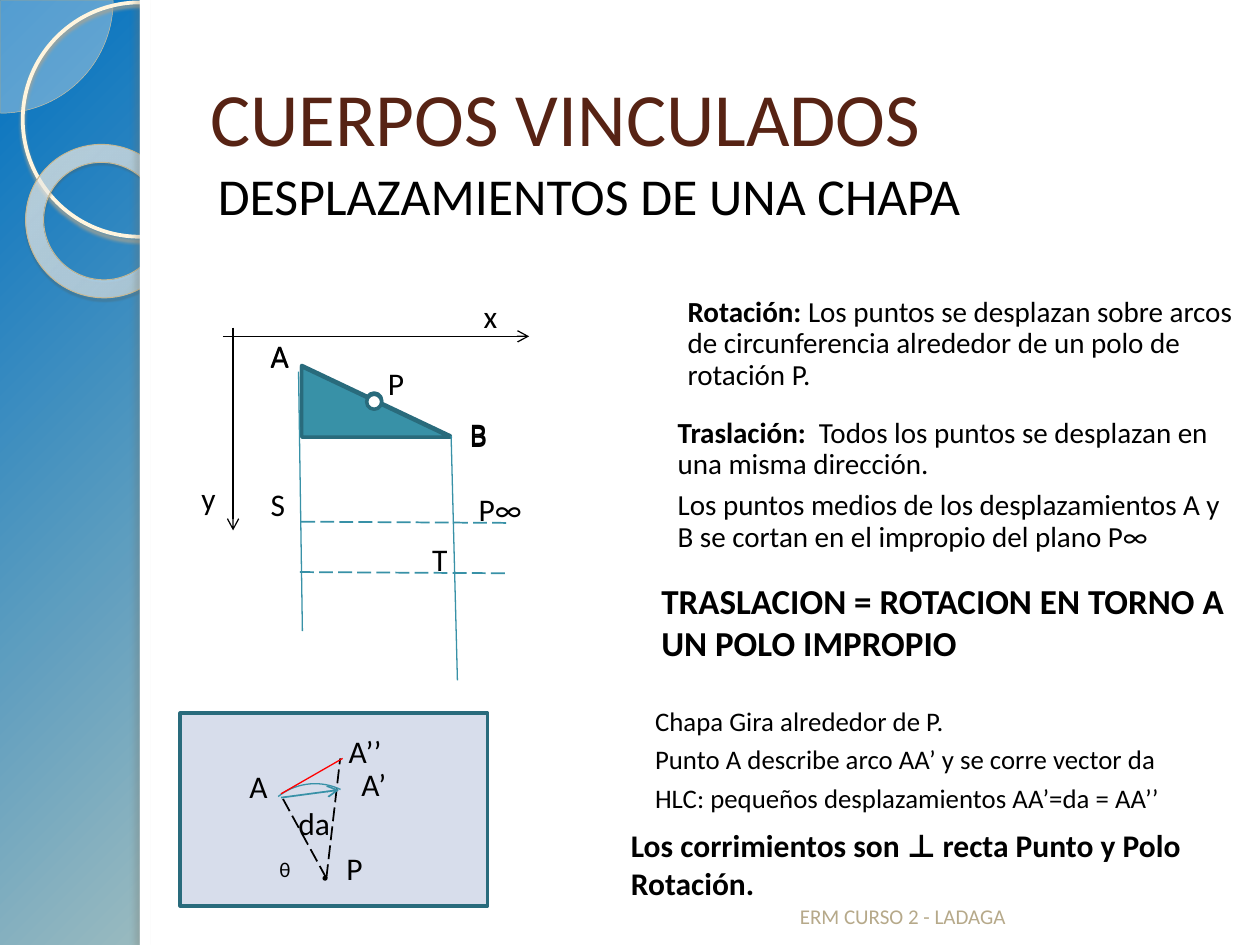
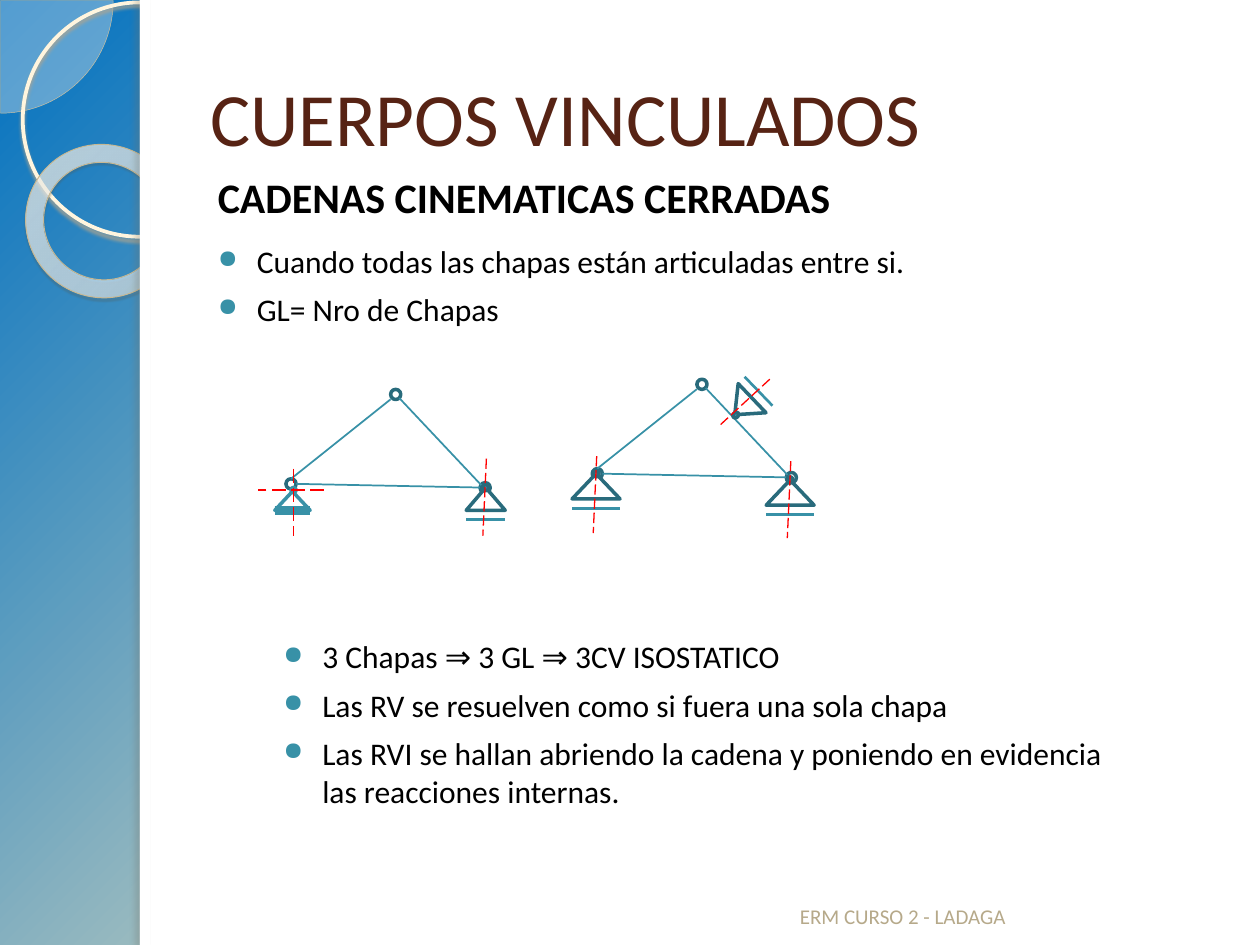
from dataclasses import dataclass

from lxml import etree
from pptx import Presentation
from pptx.dml.color import RGBColor
from pptx.enum.dml import MSO_LINE
from pptx.enum.shapes import MSO_CONNECTOR, MSO_SHAPE
from pptx.enum.text import MSO_ANCHOR
from pptx.oxml.ns import qn
from pptx.util import Pt

STRAIGHT = MSO_CONNECTOR.STRAIGHT
RECT, OVAL, PIE, DONUT, ARC = (MSO_SHAPE.RECTANGLE, MSO_SHAPE.OVAL, MSO_SHAPE.PIE,
                               MSO_SHAPE.DONUT, MSO_SHAPE.ARC)
TRIANGLE, RIGHT_TRIANGLE = MSO_SHAPE.ISOSCELES_TRIANGLE, MSO_SHAPE.RIGHT_TRIANGLE
LONG_DASH = MSO_LINE.LONG_DASH
TOP, MIDDLE, BOTTOM = MSO_ANCHOR.TOP, MSO_ANCHOR.MIDDLE, MSO_ANCHOR.BOTTOM


@dataclass(frozen=True)
class Theme:
    font: str = "Calibri"
    white: str = "FFFFFF"
    ink: str = "000000"
    title: str = "572314"
    footer: str = "B6A98A"
    teal: str = "3891A7"
    dark_teal: str = "296B7C"
    panel: str = "D7DDEB"
    red: str = "FF0000"
    veil: str = "FEFAF4"
    veil_edge: str = "D3C39F"
    ring: str = "FFF5DE"
    ring_shadow: str = "B0A68F"
    donut_edge: str = "C7B893"
    donut_shadow: str = "5A5444"
    strip_shadow: str = "736F63"
    title_size: float = 43
    subtitle_size: float = 29.6
    heading_size: float = 24
    strong_size: float = 20
    text_size: float = 18
    body_size: float = 16.6
    note_size: float = 15.3
    small_size: float = 12
    # Stops are (position %, colour, opacity %)
    sky: tuple = ((0, "0070C0", 100), (82, "FFEBBE", 100), (100, "C9B484", 100))
    sky_focus: tuple = (-24, -20, 124, 120)
    glass: tuple = ((0, "FFFCF6", 70), (70, "FFFEFB", 55), (100, "F0D28E", 60))
    glass_focus: tuple = (-408, -50, 508, 150)


def add_xml(parent, tag, **attrs):
    return etree.SubElement(parent, qn(tag), {k: str(v) for k, v in attrs.items()})


def add_color(parent, color, opacity):
    add_xml(add_xml(parent, "a:srgbClr", val=color), "a:alpha", val=opacity * 1000)


def radial_gradient(element, stops, focus):
    """Turn the first gradient inside element into a circular one."""
    grad = element.find(".//" + qn("a:gradFill"))
    for child in list(grad):
        grad.remove(child)
    stop_list = add_xml(grad, "a:gsLst")
    for position, color, opacity in stops:
        add_color(add_xml(stop_list, "a:gs", pos=position * 1000), color, opacity)
    circle = add_xml(grad, "a:path", path="circle")
    add_xml(circle, "a:fillToRect", **{k: v * 1000 for k, v in zip("ltrb", focus)})


def add_shadow(sp, color, opacity, blur, distance, angle):
    effects = sp.element.spPr.find(qn("a:effectLst"))
    shadow = add_xml(effects, "a:outerShdw", blurRad=Pt(blur), dist=Pt(distance),
                     dir=angle * 60000, algn="tl", rotWithShape=0)
    add_color(shadow, color, opacity)


class Deck:
    def __init__(self, theme):
        self.theme = theme
        self.prs = Presentation()
        self.prs.slide_width, self.prs.slide_height = Pt(720), Pt(540)
        self.slide = None

    def new_slide(self, title):
        t = self.theme
        self.slide = self.prs.slides.add_slide(self.prs.slide_layouts[6])
        self.slide.background.fill.gradient()
        radial_gradient(self.slide.element, t.sky, t.sky_focus)
        self.side_band()
        self.text(113, 21.6, 590.4, 90, [title], t.title_size, color=t.title, anchor=MIDDLE)
        self.text(450, 496.8, 228.2, 37.4, ["ERM CURSO 2 - LADAGA"], t.small_size,
                  color=t.footer, anchor=BOTTOM)

    def side_band(self):
        t = self.theme
        pie = self.shape(PIE, -64.1, -64.1, 128.8, 128.8, t.veil, t.veil_edge, 0.25)
        pie.adjustments[0], pie.adjustments[1] = 0, 54
        add_xml(pie.element.spPr.find(".//" + qn("a:srgbClr")), "a:alpha", val=33000)
        ring = self.shape(OVAL, 13, 1.4, 133.9, 133.9, None, t.ring, 2.15)
        add_shadow(ring, t.ring_shadow, 85, 2, 2, 90)
        donut = self.shape(DONUT, 14.4, 82.8, 88.6, 87.1, None, t.donut_edge, 0.58, 38.6)
        donut.adjustments[0] = 0.118
        donut.fill.gradient()
        radial_gradient(donut.element, t.glass, t.glass_focus)
        add_shadow(donut, t.donut_shadow, 35, 1, 1.2, 75)
        self.shape(RECT, 80, 0, 640, 540, t.white)
        strip = self.shape(RECT, 80, 0, 5.8, 540, t.white)
        add_shadow(strip, t.strip_shadow, 25, 3, 3, 180)

    def shape(self, kind, x, y, w, h, fill=None, line=None, weight=2, rotation=0):
        sp = self.slide.shapes.add_shape(kind, Pt(x), Pt(y), Pt(w), Pt(h))
        sp.shadow.inherit = False
        sp.rotation = rotation
        if fill:
            sp.fill.solid()
            sp.fill.fore_color.rgb = RGBColor.from_string(fill)
        else:
            sp.fill.background()
        if line:
            sp.line.color.rgb = RGBColor.from_string(line)
            sp.line.width = Pt(weight)
        else:
            sp.line.fill.background()
        return sp

    def line(self, x1, y1, x2, y2, color, weight=1, dashed=False, arrow=False):
        ln = self.slide.shapes.add_connector(STRAIGHT, Pt(x1), Pt(y1), Pt(x2), Pt(y2))
        ln.line.color.rgb = RGBColor.from_string(color)
        ln.line.width = Pt(weight)
        if dashed:
            ln.line.dash_style = LONG_DASH
        if arrow:
            add_xml(ln.element.spPr.find(qn("a:ln")), "a:tailEnd", type="arrow")
        add_xml(ln.element.spPr, "a:effectLst")

    def text(self, x, y, w, h, paragraphs, size, color=None, bold=False, anchor=TOP,
             indent=0, before=0, spacing=None, bullets=False):
        """A paragraph is a string, or a pair of a bold lead and the rest."""
        tf = self.slide.shapes.add_textbox(Pt(x), Pt(y), Pt(w), Pt(h)).text_frame
        tf.word_wrap = True
        tf.vertical_anchor = anchor
        for i, content in enumerate(paragraphs):
            p = tf.paragraphs[0] if i == 0 else tf.add_paragraph()
            has_lead = isinstance(content, tuple)
            for part in content if has_lead else (content,):
                p.add_run().text = part
            for j, r in enumerate(p.runs):
                r.font.name, r.font.size = self.theme.font, Pt(size)
                r.font.bold = bold or (has_lead and j == 0)
                r.font.color.rgb = RGBColor.from_string(color or self.theme.ink)
            p.space_before = Pt(before)
            if spacing:
                p.line_spacing = spacing
            pPr = p._p.get_or_add_pPr()
            pPr.set("marL", str(Pt(indent)))
            if bullets:
                pPr.set("indent", str(Pt(-22.3)))
                add_xml(add_xml(pPr, "a:buClr"), "a:srgbClr", val=self.theme.teal)
                add_xml(pPr, "a:buSzPct", val=80000)
                add_xml(pPr, "a:buChar", char="●")

    def label(self, text, x, y, w=38, size=None):
        self.text(x, y, w, 29, [text], size or self.theme.text_size)

    def note(self, x, y, w, h, paragraphs, size, **style):
        self.text(x, y, w, h, paragraphs, size, indent=31.7, before=5.5, **style)

    def bullet_list(self, x, y, w, h, items):
        self.text(x, y, w, h, items, self.theme.text_size, indent=28.8, before=6, bullets=True)

    def subtitle(self, text, size, **style):
        self.text(110.9, 94.3, 590.4, 39.6, [text], size, indent=6.5, before=6, **style)

    def hinged_plate(self, y):
        t = self.theme
        self.shape(RIGHT_TRIANGLE, 172.4, y, 85, 40.3, t.teal, t.dark_teal)
        self.shape(OVAL, 209.5, y + 15.8, 8.6, 8.6, t.white, t.dark_teal)
        self.label("A", 147.6, y - 20.2)
        self.label("B", 261.4, y + 24.5)

    def three_bar_chain(self, dx=0, dy=0):
        t = self.theme
        for x, y in ((163.4, 273.6), (223.2, 222.5), (274.3, 275.8)):
            self.shape(OVAL, x + dx, y + dy, 5.8, 5.8, None, t.dark_teal)
        for x1, y1, x2, y2 in ((166.3, 273.6, 223.2, 228.2), (275, 277.2, 228.2, 227.5),
                               (274.3, 278.6, 169.2, 276.5)):
            self.line(x1 + dx, y1 + dy, x2 + dx, y2 + dy, t.teal)

    def roller(self, x, y, w, h, axis_top):
        t = self.theme
        center, plate = x + w / 2, y + h + 5.4
        self.line(x, plate, x + w, plate, t.teal, 1.5)
        self.shape(TRIANGLE, x, y, w, h, t.white, t.dark_teal)
        self.shape(OVAL, center - 1.6, y - 1.8, 3.2, 3.6, t.teal, t.dark_teal)
        self.line(center + 0.4, axis_top, center - 1.6, axis_top + 44, t.red, 0.75, dashed=True)

    def tilted_roller(self):
        t = self.theme
        self.line(425.5, 215.3, 441.4, 231.8, t.teal, 1.5)
        self.shape(TRIANGLE, 413.3, 225.4, 23, 13.7, t.white, t.dark_teal, rotation=226.3)
        self.shape(OVAL, 419, 235.4, 2.9, 3.6, t.teal, t.dark_teal, rotation=46.3)
        self.line(439.9, 216.7, 411.8, 242.6, t.red, 0.75, dashed=True)

    def fixed_support(self):
        t = self.theme
        self.shape(TRIANGLE, 157, 280.8, 20.2, 10.8, t.white, t.teal)
        self.shape(OVAL, 166.3, 278.6, 2.9, 2.9, t.teal, t.teal)
        self.line(157, 291.6, 177.1, 291.6, t.teal, 5)
        self.line(167.8, 267.8, 167.8, 306, t.red, dashed=True)
        self.line(185, 280.1, 147.6, 280.1, t.red, dashed=True)


def plate_displacements(deck):
    t = deck.theme
    deck.new_slide("CUERPOS VINCULADOS")
    deck.subtitle("DESPLAZAMIENTOS DE UNA CHAPA", t.subtitle_size, spacing=0.9)

    deck.note(354.2, 166.3, 357.1, 63.4, [
        ("Rotación: ", "Los puntos se desplazan sobre arcos de circunferencia "
                       "alrededor de un polo de rotación P.")], t.body_size, spacing=0.9)
    deck.note(348.5, 235.4, 357.1, 92.2, [
        ("Traslación:  ", "Todos los puntos se desplazan en una misma dirección."),
        "Los puntos medios de los desplazamientos A y B se cortan en el impropio del plano P∞",
    ], t.body_size, spacing=0.9)
    deck.note(339.1, 327.6, 376.6, 54.7,
              ["TRASLACION = ROTACION EN TORNO A UN POLO IMPROPIO"], t.strong_size, bold=True)
    deck.note(335.5, 401, 349.2, 85, [
        "Chapa Gira alrededor de P.",
        "Punto A describe arco AA’ y se corre vector da",
        "HLC: pequeños desplazamientos AA’=da = AA’’"], t.note_size, spacing=0.9)
    deck.note(321.8, 468.7, 376.6, 33.1,
              ["Los corrimientos son ⊥ recta Punto y Polo Rotación."], t.text_size, bold=True)

    # Translation diagram
    deck.line(127.4, 192.2, 302.4, 192.2, t.ink, 0.75, arrow=True)
    deck.line(133.2, 187.2, 133.2, 303.1, t.ink, 0.75, arrow=True)
    for y in (208.8, 209.5):
        deck.hinged_plate(y)
    deck.line(170.6, 212.4, 172.8, 360.7, t.teal, 0.75)
    deck.line(257.8, 249.1, 261.4, 388.8, t.teal, 0.75)
    for x, y in ((172.1, 298.1), (171.4, 326.9)):
        deck.line(x, y, x + 117.3, y + 0.7, t.teal, dashed=True)
    for text, x, y in (("x", 269.3, 166.3), ("y", 108, 270), ("P", 214.6, 204.5),
                       ("S", 147.6, 273.6), ("T", 239.8, 305.3)):
        deck.label(text, x, y)
    deck.label("P∞", 266.4, 276.5, 65)

    # Rotation diagram
    deck.shape(RECT, 103, 407.5, 175.7, 110.2, t.panel, t.dark_teal)
    for x, y in ((161.3, 455.8), (194.4, 433.4)):
        deck.line(186.5, 501.8, x, y, t.ink, dashed=True)
    arc = deck.shape(ARC, 146.2, 447.8, 67.7, 67.7, None, t.teal, 0.75, 321.5)
    arc.adjustments[0], arc.adjustments[1] = 162, 200.415
    deck.shape(OVAL, 184.3, 500.4, 2.9, 2.9, t.ink)
    deck.line(160.6, 455.8, 193.7, 451.4, t.teal, arrow=True)
    deck.line(160.6, 453.6, 195.8, 433.4, t.red, 0.75)
    for text, x, y in (("A", 135.4, 434.9), ("P", 190.8, 481.7), ("A’", 199.4, 433.4),
                       ("da", 163.4, 455.8), ("A’’", 192.2, 414.7)):
        deck.label(text, x, y)
    deck.label("θ", 152.6, 486, size=t.small_size)


def closed_chains(deck):
    deck.new_slide("CUERPOS VINCULADOS")
    deck.subtitle("CADENAS CINEMATICAS CERRADAS", deck.theme.heading_size, bold=True)
    deck.bullet_list(110.9, 134.6, 590.4, 61.9, [
        "Cuando todas las chapas están articuladas entre si.", "GL= Nro de Chapas"])

    deck.three_bar_chain()
    deck.fixed_support()
    deck.roller(266.4, 278.6, 22.3, 13, 262.1)

    deck.three_bar_chain(175, -5.8)
    deck.roller(326.9, 270.7, 27.4, 14.4, 260.6)
    deck.roller(437.8, 274.3, 27.4, 14.4, 263.5)
    deck.tilted_roller()

    deck.bullet_list(148.3, 360.7, 489.6, 118.8, [
        "3 Chapas ⇒ 3 GL ⇒ 3CV ISOSTATICO",
        "Las RV se resuelven como si fuera una sola chapa",
        "Las RVI se hallan abriendo la cadena y poniendo en evidencia las reacciones internas."])


def main():
    deck = Deck(Theme())
    plate_displacements(deck)
    closed_chains(deck)
    deck.prs.save("out.pptx")


if __name__ == "__main__":
    main()
